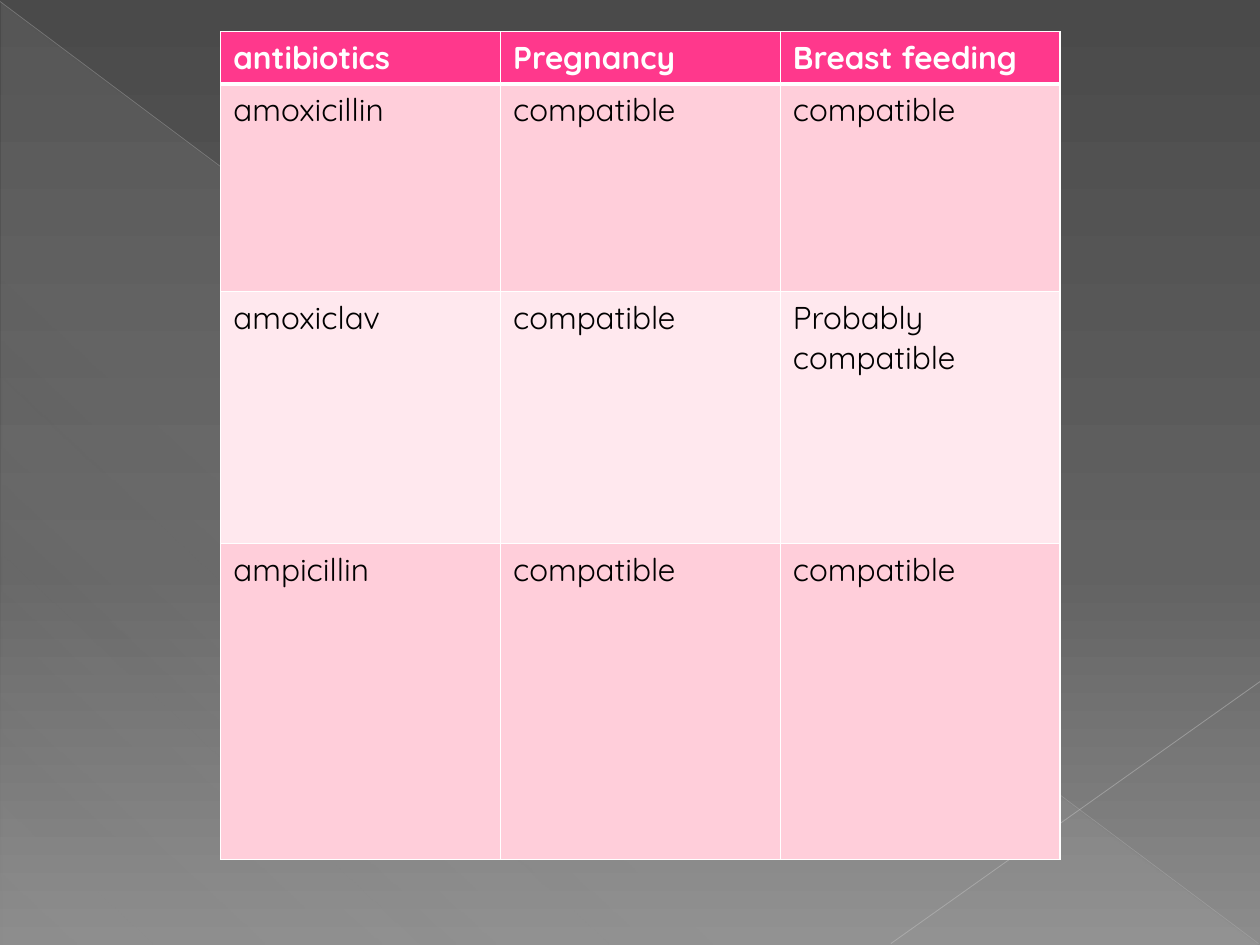
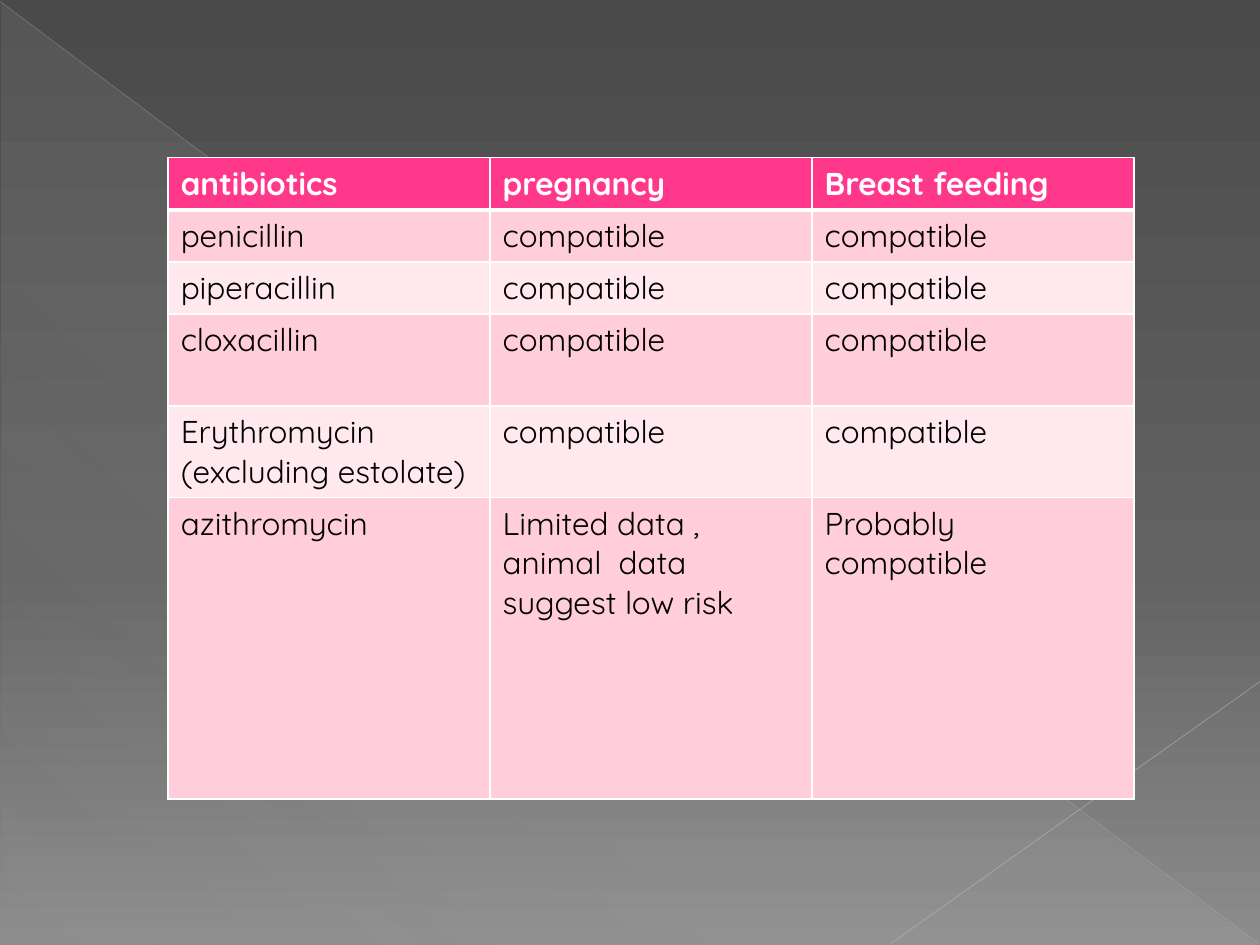
from lxml.etree import SubElement
from pptx import Presentation
from pptx.dml.color import RGBColor
from pptx.enum.shapes import MSO_CONNECTOR, MSO_SHAPE
from pptx.oxml.ns import qn
from pptx.util import Cm, Pt

TABLES = [
    {
        "left": 4.45, "top": 0.64, "column_width": 5.64,
        "row_heights": [1.05, 4.19, 5.08, 6.37],
        "rows": [
            ("antibiotics", "Pregnancy", "Breast feeding"),
            ("amoxicillin", "compatible", "compatible"),
            ("amoxiclav", "compatible", "Probably compatible"),
            ("ampicillin", "compatible", "compatible"),
        ],
    },
    {
        "left": 3.39, "top": 3.18, "column_width": 6.49,
        "row_heights": [1.05, 1.05, 1.05, 1.85, 1.85, 6.07],
        "rows": [
            ("antibiotics", "pregnancy", "Breast feeding"),
            ("penicillin", "compatible", "compatible"),
            ("piperacillin", "compatible", "compatible"),
            ("cloxacillin", "compatible", "compatible"),
            ("Erythromycin\n(excluding estolate)", "compatible", "compatible"),
            ("azithromycin", "Limited data , animal  data suggest low risk",
             "Probably compatible"),
        ],
    },
]

COLORS = {
    "header": "FF388C", "odd_row": "FFCEDA", "even_row": "FFE8EE",
    "border": "FFFFFF", "header_text": "FFFFFF", "body_text": "000000",
    "triangle": "D2D2D2", "long_line": "BFBFBF", "short_line": "C6C6C6",
}
# Gradient stops: position %, colour, opacity %
BACKGROUND_STOPS = [(0, "4A4A4A", 100), (60, "626262", 100), (100, "8C8C8C", 100)]
TRIANGLE_STOPS = [(0, COLORS["triangle"], 10), (70, COLORS["triangle"], 8),
                  (100, COLORS["triangle"], 1)]
# Start, end, colour, width in points, opacity %
BACKDROP_LINES = [
    ((0, 0.03), (25.37, 19.02), COLORS["long_line"], 0.39, 35),
    ((25.4, 13.74), (17.96, 19.02), COLORS["short_line"], 0.47, 45),
]
FONT = "Quicksand"
BORDER, HEADER_RULE = 1, 3


def add_color(parent, color, opacity=100):
    element = SubElement(parent, qn("a:srgbClr"), val=color)
    if opacity < 100:
        SubElement(element, qn("a:alpha"), val=str(opacity * 1000))


def set_gradient(fill, owner, stops, angle):
    """Give fill, which lies inside the XML element owner, the stops and clockwise angle."""
    fill.gradient()
    gradient = owner.find(".//" + qn("a:gradFill"))
    for child in list(gradient):
        gradient.remove(child)
    stop_list = SubElement(gradient, qn("a:gsLst"))
    for position, color, opacity in stops:
        stop = SubElement(stop_list, qn("a:gs"), pos=str(position * 1000))
        add_color(stop, color, opacity)
    SubElement(gradient, qn("a:lin"), ang=str(angle * 60000), scaled="0")


def add_backdrop(slide):
    triangle = slide.shapes.add_shape(
        MSO_SHAPE.RIGHT_TRIANGLE, Cm(0.03), Cm(0.05), Cm(25.35), Cm(19))
    triangle.shadow.inherit = False
    triangle.line.fill.background()
    set_gradient(triangle.fill, triangle._element, TRIANGLE_STOPS, 133)
    for start, end, color, width, opacity in BACKDROP_LINES:
        connector = slide.shapes.add_connector(
            MSO_CONNECTOR.STRAIGHT, *map(Cm, start + end))
        connector.line.width = Pt(width)
        connector.line.fill.solid()
        solid = connector.line._ln.find(qn("a:solidFill"))
        add_color(solid, color, opacity)
        SubElement(connector._element.spPr, qn("a:effectLst"))


def set_borders(cell, top, bottom):
    properties = cell._tc.get_or_add_tcPr()
    for side, width in (("L", BORDER), ("R", BORDER), ("T", top), ("B", bottom)):
        line = SubElement(properties, qn(f"a:ln{side}"), w=str(Pt(width)))
        add_color(SubElement(line, qn("a:solidFill")), COLORS["border"])


def format_cell(cell, row_index):
    is_header = row_index == 0
    set_borders(cell, HEADER_RULE if row_index == 1 else BORDER,
                HEADER_RULE if is_header else BORDER)
    fill_name = "header" if is_header else ("odd_row" if row_index % 2 else "even_row")
    text_name = "header_text" if is_header else "body_text"
    cell.fill.solid()
    cell.fill.fore_color.rgb = RGBColor.from_string(COLORS[fill_name])
    for paragraph in cell.text_frame.paragraphs:
        font = paragraph.font
        font.name, font.size, font.bold = FONT, Pt(18), is_header
        font.color.rgb = RGBColor.from_string(COLORS[text_name])


def add_antibiotics_table(slide, content):
    rows, heights = content["rows"], content["row_heights"]
    column_count = len(rows[0])
    table = slide.shapes.add_table(
        len(rows), column_count, Cm(content["left"]), Cm(content["top"]),
        Cm(content["column_width"] * column_count), Cm(sum(heights))).table
    for column in table.columns:
        column.width = Cm(content["column_width"])
    for row_index, (texts, height) in enumerate(zip(rows, heights)):
        table.rows[row_index].height = Cm(height)
        for cell, text in zip(table.rows[row_index].cells, texts):
            cell.text = text
            format_cell(cell, row_index)


def main():
    presentation = Presentation()
    presentation.slide_width, presentation.slide_height = Cm(25.4), Cm(19.05)
    master = presentation.slide_master
    set_gradient(master.background.fill, master._element, BACKGROUND_STOPS, 90)
    blank_layout = presentation.slide_layouts.get_by_name("Blank")
    for content in TABLES:
        slide = presentation.slides.add_slide(blank_layout)
        add_backdrop(slide)
        add_antibiotics_table(slide, content)
    presentation.save("out.pptx")


if __name__ == "__main__":
    main()
